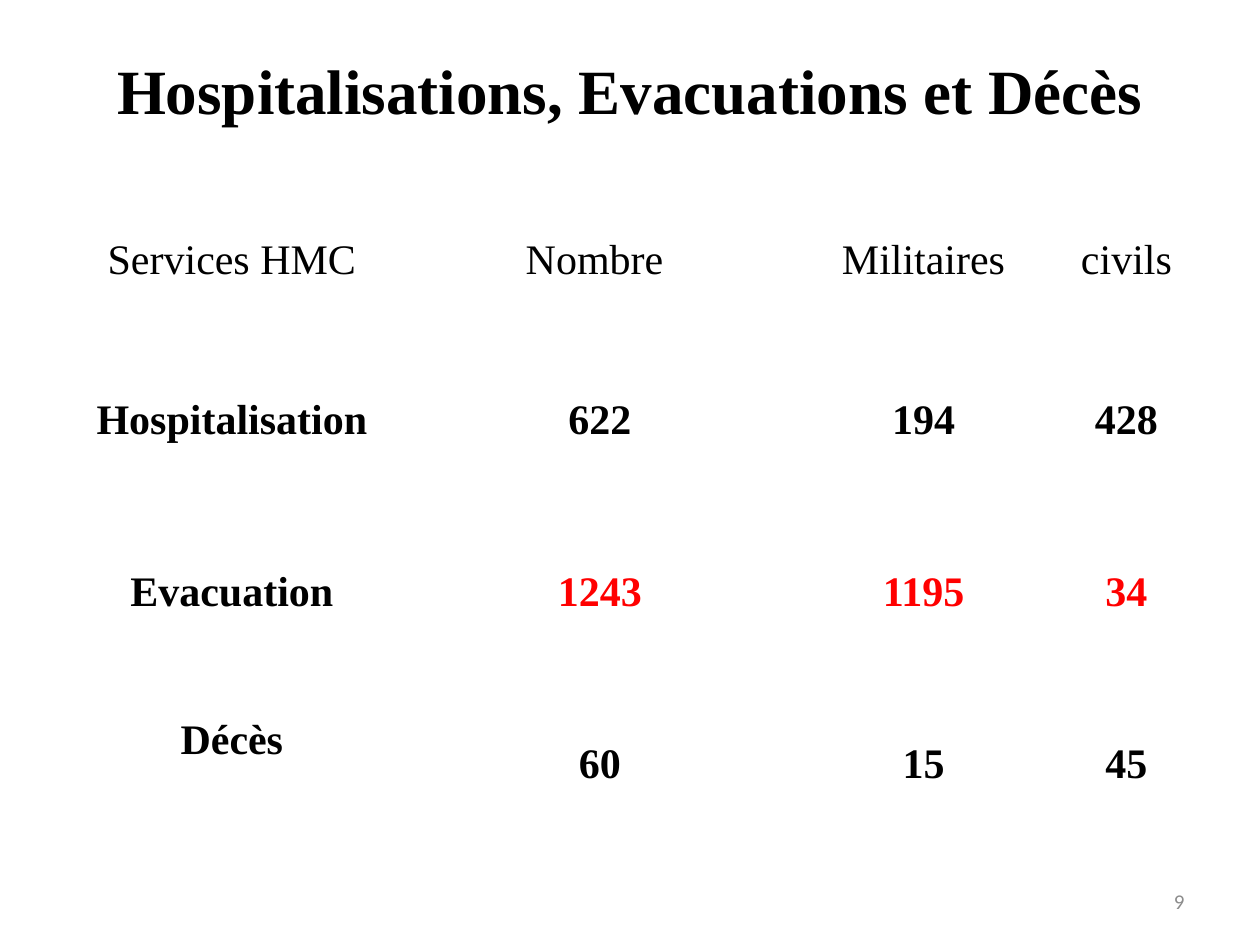
from pptx import Presentation
from pptx.dml.color import RGBColor
from pptx.enum import text
from pptx.util import Pt

BLACK, RED, GREY = "000000", "FF0000", "8C8C8C"
SERIF = "Times New Roman"


def write(frame, words, alignment, color=BLACK, **font_values):
    """Put one formatted line into a text frame and return its paragraph."""
    paragraph = frame.paragraphs[0]
    paragraph.alignment = alignment
    run = paragraph.add_run()
    run.text = words
    for name, value in font_values.items():
        setattr(run.font, name, value)
    run.font.color.rgb = RGBColor.from_string(color)
    return paragraph


presentation = Presentation()
presentation.slide_width, presentation.slide_height = Pt(720), Pt(540)
slide = presentation.slides.add_slide(presentation.slide_layouts[6])

# Title
title = slide.shapes.add_textbox(Pt(59.8), Pt(25.9), Pt(607), Pt(45.4))
title.text_frame.word_wrap = True
heading = write(title.text_frame, "Hospitalisations, Evacuations et Décès",
                text.PP_ALIGN.LEFT, name=SERIF, size=Pt(36), bold=True)
heading.space_before = Pt(6)

# Table of services
rows = [
    ("Services HMC", "Nombre ", "Militaires", "civils"),
    ("Hospitalisation", "622", "194", "428"),
    ("Evacuation", "1243", "1195", "34"),
    ("Décès", "60", "15", "45"),
]
column_widths = [180, 240.5, 129.6, 102.2]
row_heights = [85, 97.9, 98.6, 98.6]
cell_format = {
    "margin_left": Pt(0.7),
    "margin_right": Pt(0.7),
    "margin_top": Pt(0.7),
    "margin_bottom": Pt(0),
    "vertical_anchor": text.MSO_ANCHOR.MIDDLE,
}

table = slide.shapes.add_table(
    len(rows), len(column_widths), Pt(42.5), Pt(105.8),
    Pt(sum(column_widths)), Pt(sum(row_heights))).table
table.first_row = table.horz_banding = False
for column, width in zip(table.columns, column_widths):
    column.width = Pt(width)
for row, height in zip(table.rows, row_heights):
    row.height = Pt(height)

for row_index, row in enumerate(rows):
    for column_index, words in enumerate(row):
        cell = table.cell(row_index, column_index)
        cell.fill.background()
        for name, value in cell_format.items():
            setattr(cell, name, value)
        is_red = row[0] == "Evacuation" and column_index > 0
        write(cell.text_frame, words, text.PP_ALIGN.CENTER,
              RED if is_red else BLACK,
              name=SERIF, size=Pt(24), bold=row_index > 0)

# The last row label sits above the middle of its row
table.cell(len(rows) - 1, 0).margin_bottom = Pt(27.5)

# Slide number
number = slide.shapes.add_textbox(Pt(516), Pt(500.5), Pt(168), Pt(28.8))
number.text_frame.word_wrap = True
number.text_frame.vertical_anchor = text.MSO_ANCHOR.MIDDLE
write(number.text_frame, "9", text.PP_ALIGN.RIGHT, GREY,
      name="Calibri", size=Pt(12))

presentation.save("out.pptx")
